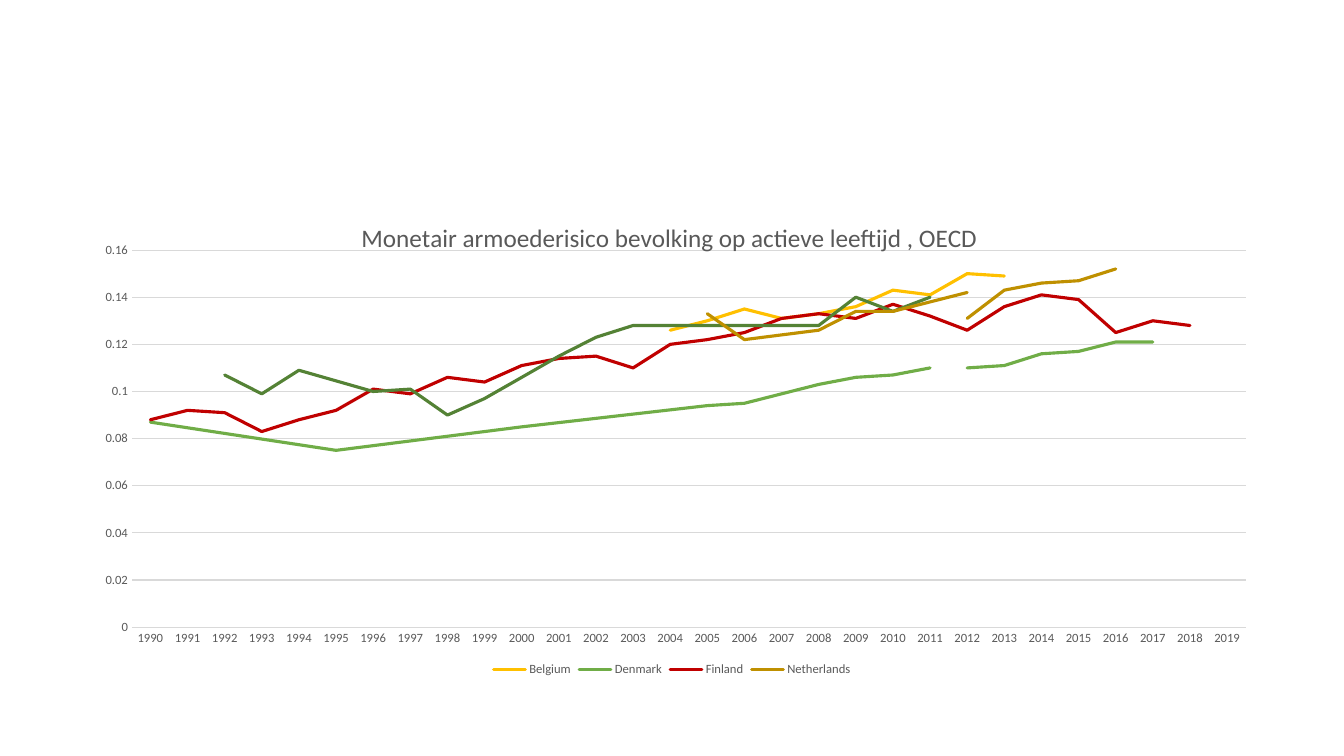
from lxml.etree import SubElement, Element
from pptx import Presentation
from pptx.chart.data import CategoryChartData
from pptx.dml.color import RGBColor
from pptx.enum.chart import XL_CHART_TYPE, XL_LEGEND_POSITION, XL_TICK_MARK
from pptx.oxml.ns import qn
from pptx.util import Cm, Pt

COLOURS = {
    "text": "595959",
    "grid": "D9D9D9",
    "grey": "A5A5A5",
    "belgium": "FFC000",
    "denmark": "70AD47",
    "finland": "C00000",
    "dark green": "548235",
    "netherlands": "BF9000",
    "pale yellow": "FFD966",
    "orange": "ED7D31",
}
FONT = "Calibri"
TITLE = "Monetair armoederisico bevolking op actieve leeftijd , OECD"
YEARS = range(1990, 2020)
GAP = [None]
SERIES = [
    ("Series 1", "grey", 1990, []),
    ("Belgium", "belgium", 2018, [0.143]),
    ("Series 3", "belgium", 2004,
     [0.126, 0.13, 0.135, 0.131, 0.133, 0.136, 0.143, 0.141, 0.15, 0.149]),
    ("Denmark", "denmark", 2012, [0.11, 0.111, 0.116, 0.117, 0.121, 0.121]),
    ("Series 5", "denmark", 1990,
     [0.087] + GAP * 4 + [0.075] + GAP * 4 + [0.085] + GAP * 4
     + [0.094, 0.095, 0.099, 0.103, 0.106, 0.107, 0.11]),
    ("Finland", "finland", 2012,
     [0.126, 0.136, 0.141, 0.139, 0.125, 0.13, 0.128]),
    ("Series 7", "finland", 1990,
     [0.088, 0.092, 0.091, 0.083, 0.088, 0.092, 0.101, 0.099, 0.106, 0.104,
      0.111, 0.114, 0.115, 0.11, 0.12, 0.122, 0.125, 0.131, 0.133, 0.131,
      0.137, 0.132, 0.126]),
    ("Series 8", "dark green", 1992,
     [0.107, 0.099, 0.109] + GAP + [0.1, 0.101, 0.09, 0.097] + GAP
     + [0.115, 0.123, 0.128] + GAP * 4 + [0.128, 0.14, 0.134, 0.14]),
    ("Netherlands", "netherlands", 2012, [0.131, 0.143, 0.146, 0.147, 0.152]),
    ("Series 10", "netherlands", 2005,
     [0.133, 0.122, 0.124, 0.126, 0.134, 0.134] + GAP + [0.142]),
    ("Series 11", "pale yellow", 1990, []),
    ("Series 12", "orange", 1990, []),
]


def colour(name):
    return RGBColor.from_string(COLOURS[name])


def style_font(font, size):
    font.name = FONT
    font.size = Pt(size)
    font.bold = False
    font.color.rgb = colour("text")


def style_line(line, name, width):
    line.color.rgb = colour(name)
    line.width = Pt(width)


def set_layout(owner, index, **settings):
    layout = owner.find(qn("c:layout"))
    if layout is None:
        layout = Element(qn("c:layout"))
        owner.insert(index, layout)
    for child in list(layout):
        layout.remove(child)
    manual = SubElement(layout, qn("c:manualLayout"))
    for tag, value in settings.items():
        SubElement(manual, qn(f"c:{tag}")).set("val", str(value))


def poverty_data():
    data = CategoryChartData()
    data.categories = [str(year) for year in YEARS]
    for name, _, start, values in SERIES:
        before = start - YEARS[0]
        after = len(YEARS) - before - len(values)
        data.add_series(name, GAP * before + values + GAP * after)
    return data


def style_title(chart):
    chart.has_title = True
    title = chart.chart_title
    title.text_frame.text = TITLE
    for span in title.text_frame.paragraphs[0].runs:
        style_font(span.font, 18)
    set_layout(title._element, 1, xMode="edge", yMode="edge", x=0.228, y=0.03)


def style_axes(chart):
    for axis in (chart.category_axis, chart.value_axis):
        axis.major_tick_mark = XL_TICK_MARK.NONE
        axis.minor_tick_mark = XL_TICK_MARK.NONE
        style_font(axis.tick_labels.font, 9)
    style_line(chart.category_axis.format.line, "grid", 0.75)
    values = chart.value_axis
    values.minimum_scale, values.maximum_scale = 0, 0.16
    values.major_unit = 0.02
    values.format.line.fill.background()
    values.has_major_gridlines = True
    style_line(values.major_gridlines.format.line, "grid", 0.75)


def style_legend(chart):
    chart.has_legend = True
    legend = chart.legend
    legend.position = XL_LEGEND_POSITION.BOTTOM
    legend.include_in_layout = False
    style_font(legend.font, 9)
    position = legend._element.find(qn("c:legendPos"))
    for index in reversed(range(len(SERIES))):
        if SERIES[index][0].startswith("Series"):
            entry = Element(qn("c:legendEntry"))
            SubElement(entry, qn("c:idx")).set("val", str(index))
            SubElement(entry, qn("c:delete")).set("val", "1")
            position.addnext(entry)


def poverty_chart(page, left, top, width, height):
    frame = page.shapes.add_chart(
        XL_CHART_TYPE.LINE, left, top, width, height, poverty_data())
    chart = frame.chart
    style_font(chart.font, 10)
    style_title(chart)
    style_axes(chart)
    style_legend(chart)
    chart.plots[0].vary_by_categories = False
    for series, (_, name, _, _) in zip(chart.plots[0].series, SERIES):
        series.smooth = False
        style_line(series.format.line, name, 2.25)
        series.format.line._ln.set("cap", "rnd")
    root = chart._chartSpace.find(qn("c:chart"))
    set_layout(root.find(qn("c:plotArea")), 0, layoutTarget="inner",
               xMode="edge", yMode="edge", x=0.034, y=0.102, w=0.961, h=0.786)
    root.find(qn("c:dispBlanksAs")).set("val", "span")


def main():
    deck = Presentation()
    deck.slide_width, deck.slide_height = Cm(33.87), Cm(19.05)
    page = deck.slides.add_slide(deck.slide_layouts[6])
    poverty_chart(page, Cm(2.33), Cm(5.07), Cm(29.21), Cm(12.09))
    deck.save("out.pptx")


if __name__ == "__main__":
    main()
